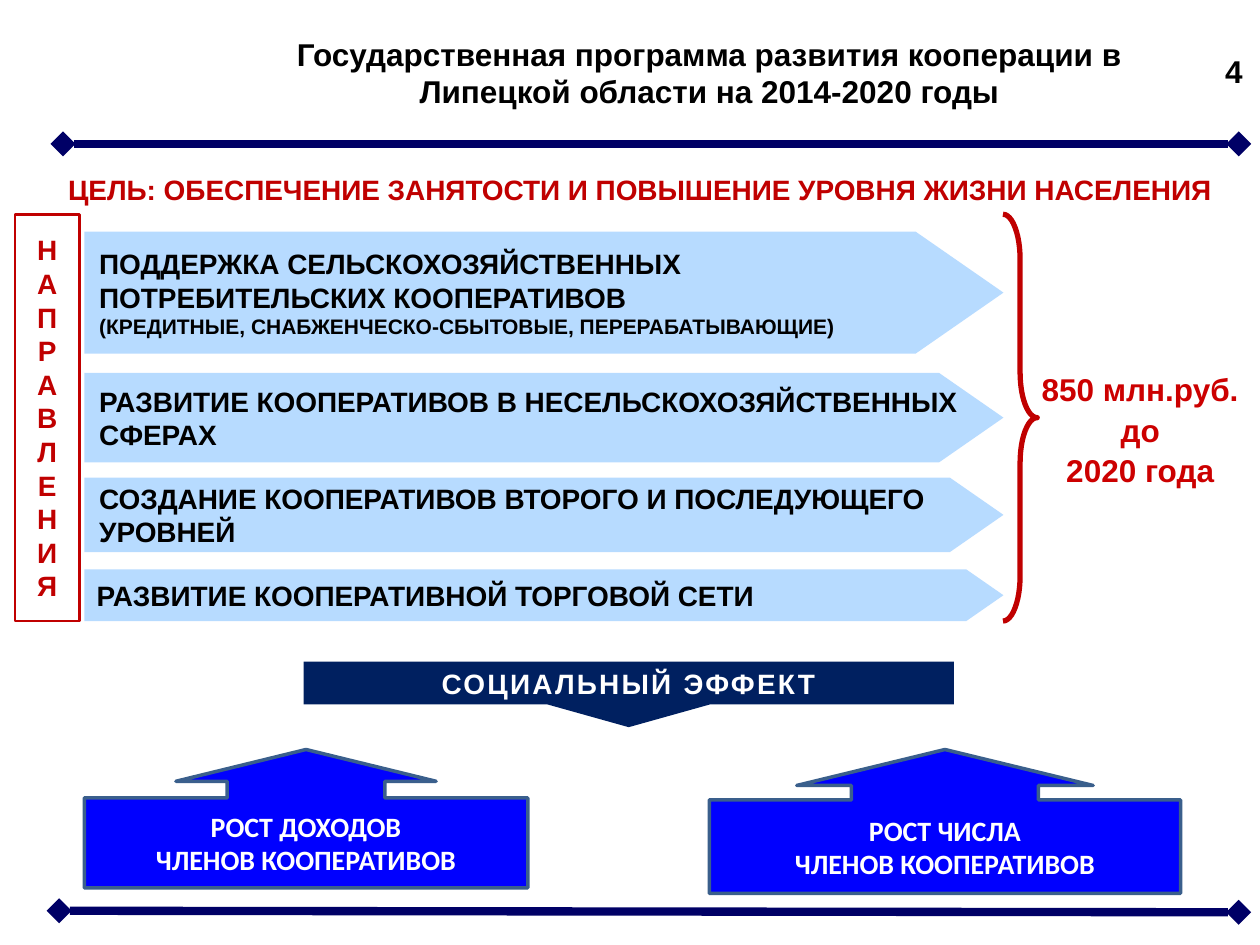
"""Build a slide on the regional programme for developing cooperatives."""
from lxml import etree
from pptx import Presentation
from pptx.dml.color import RGBColor
from pptx.enum import shapes, text
from pptx.oxml import ns
from pptx.util import Cm, Pt

COLORS = {"rule": "000066", "red": "C00000", "amount": "CC0000", "sky": "99CCFF",
          "blue": "0000FF", "edge": "3A5F8C", "navy": "002060",
          "white": "FFFFFF", "black": "000000"}
TITLE = ["Государственная программа развития кооперации в",
         "Липецкой области на 2014-2020 годы"]
GOAL = "ЦЕЛЬ: ОБЕСПЕЧЕНИЕ ЗАНЯТОСТИ И ПОВЫШЕНИЕ УРОВНЯ ЖИЗНИ НАСЕЛЕНИЯ"
SIDE_LABEL = "Н А П Р А В Л Е Н И Я"
DIRECTIONS = [
    (4.67, 2.46, 0.3, ["ПОДДЕРЖКА СЕЛЬСКОХОЗЯЙСТВЕННЫХ ПОТРЕБИТЕЛЬСКИХ КООПЕРАТИВОВ",
                       "(КРЕДИТНЫЕ, СНАБЖЕНЧЕСКО-СБЫТОВЫЕ, ПЕРЕРАБАТЫВАЮЩИЕ)"]),
    (7.52, 1.8, 0.3, ["РАЗВИТИЕ КООПЕРАТИВОВ В НЕСЕЛЬСКОХОЗЯЙСТВЕННЫХ СФЕРАХ"]),
    (9.63, 1.5, 0.3, ["СОЗДАНИЕ КООПЕРАТИВОВ ВТОРОГО И ПОСЛЕДУЮЩЕГО УРОВНЕЙ"]),
    (11.48, 1.04, 0.25, ["РАЗВИТИЕ КООПЕРАТИВНОЙ ТОРГОВОЙ СЕТИ"]),
]
AMOUNT = ["850 млн.руб.", "до", "2020 года"]
EFFECT = "СОЦИАЛЬНЫЙ ЭФФЕКТ"
RESULTS = [
    ((1.7, 15.11, 8.94, 2.79), (1.14, 0.94, 0.23, 0.65),
     ["РОСТ ДОХОДОВ", "ЧЛЕНОВ КООПЕРАТИВОВ"]),
    ((14.3, 15.11, 9.5, 2.9), (1.3, 1.03, 0.25, 0.65),
     ["РОСТ ЧИСЛА", "ЧЛЕНОВ КООПЕРАТИВОВ"]),
]
RULES = [(1.27, 2.9, 24.97, 2.9), (1.19, 18.36, 24.97, 18.39)]
SHAPE = shapes.MSO_SHAPE
ALIGN = text.PP_ALIGN
ANCHOR = text.MSO_ANCHOR


def rgb(name):
    return RGBColor.from_string(COLORS[name])


def write(sp, lines, color, size=16, font="Arial", align=ALIGN.CENTER,
          anchor=ANCHOR.MIDDLE, insets=(0.25, 0.13, 0.25, 0.13)):
    tf = sp.text_frame
    tf.word_wrap = True
    tf.vertical_anchor = anchor
    tf.margin_left, tf.margin_top, tf.margin_right, tf.margin_bottom = map(Cm, insets)
    tf.text = "\n".join(lines)
    for p in tf.paragraphs:
        p.alignment = align
        p.font.name, p.font.size, p.font.bold = font, Pt(size), True
        p.font.color.rgb = rgb(color)
    return tf


def add_shape(s, kind, box, fill=None, line=None, width=1, adjustments=()):
    sp = s.shapes.add_shape(kind, *map(Cm, box))
    sp.shadow.inherit = False
    for i, value in enumerate(adjustments):
        sp.adjustments[i] = value
    if fill:
        sp.fill.solid()
        sp.fill.fore_color.rgb = rgb(fill)
    else:
        sp.fill.background()
    if line:
        sp.line.color.rgb = rgb(line)
        sp.line.width = Pt(width)
    else:
        sp.line.fill.background()
    return sp


def add_text(s, box, lines, color, **style):
    return write(s.shapes.add_textbox(*map(Cm, box)), lines, color, **style)


def add_rule(s, ends):
    rule = s.shapes.add_connector(shapes.MSO_CONNECTOR.STRAIGHT, *map(Cm, ends))
    rule.line.color.rgb = rgb("rule")
    rule.line.width = Pt(4.75)
    for end in ("a:headEnd", "a:tailEnd"):
        etree.SubElement(rule.line._get_or_add_ln(), ns.qn(end), type="diamond")
    etree.SubElement(rule._element.spPr, ns.qn("a:effectLst"))


def add_direction(s, top, height, inset, lines):
    sp = add_shape(s, SHAPE.PENTAGON, (1.7, top, 18.53, height), "sky",
                   adjustments=[0.72])
    color = sp._element.spPr.find(".//" + ns.qn("a:srgbClr"))
    etree.SubElement(color, ns.qn("a:alpha"), val="70000")
    tf = write(sp, lines, "black", align=ALIGN.LEFT, insets=(inset, 0.1, 0.1, 0.1))
    for p in tf.paragraphs[1:]:
        p.font.size = Pt(12)


def main():
    prs = Presentation()
    prs.slide_width, prs.slide_height = Cm(25.4), Cm(19.05)
    s = prs.slides.add_slide(prs.slide_layouts[5])
    title = s.shapes.title
    title.left, title.top, title.width, title.height = map(Cm, (3.3, 0.56, 22, 1.8))
    write(title, TITLE, "black", size=18)

    for ends in RULES:
        add_rule(s, ends)
    add_text(s, (0.66, 3.48, 24.49, 0.69), [GOAL], "red",
             anchor=ANCHOR.TOP, insets=(0, 0, 0, 0))

    label = add_shape(s, SHAPE.RECTANGLE, (0.3, 4.32, 1.3, 8.2), "white", "red", 1.5)
    write(label, [SIDE_LABEL], "red")
    for direction in DIRECTIONS:
        add_direction(s, *direction)
    add_shape(s, SHAPE.RIGHT_BRACE, (20.22, 4.32, 0.69, 8.2), line="red", width=3,
              adjustments=[1.32, 0.5])
    tf = add_text(s, (20.8, 7.42, 4.37, 2.39), AMOUNT, "amount", size=18,
                  anchor=ANCHOR.TOP, insets=(0, 0, 0, 0))
    for p in tf.paragraphs:
        p.line_spacing = Pt(23)

    for box, adjustments, lines in RESULTS:
        sp = add_shape(s, SHAPE.UP_ARROW_CALLOUT, box, "blue", "edge", 2, adjustments)
        write(sp, lines, "white", font="Calibri")
    effect = add_shape(s, SHAPE.DOWN_ARROW_CALLOUT, (6.12, 13.34, 13.11, 1.32), "navy",
                       adjustments=(0.95, 1.25, 0.35, 0.65))
    tf = write(effect, [EFFECT], "white")
    tf.paragraphs[0].runs[0].font._element.set("spc", "130")
    add_text(s, (23.9, 0.91, 1.4, 1.19), ["4"], "black", size=18,
             align=ALIGN.RIGHT, anchor=ANCHOR.TOP)
    prs.save("out.pptx")


if __name__ == "__main__":
    main()
